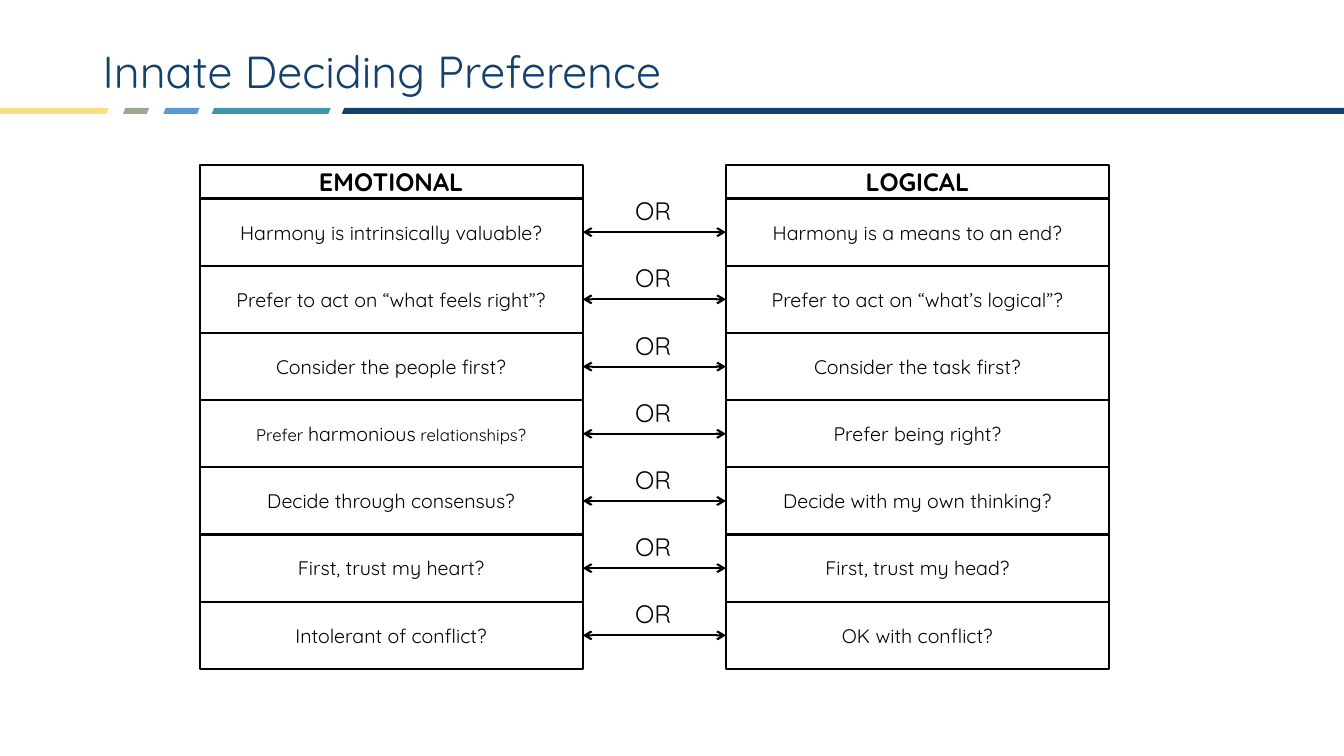
from dataclasses import dataclass

from lxml import etree
from pptx import Presentation
from pptx.dml.color import RGBColor
from pptx.enum.shapes import MSO_CONNECTOR, MSO_SHAPE
from pptx.enum.text import MSO_ANCHOR, PP_ALIGN
from pptx.oxml.ns import qn
from pptx.slide import Slide
from pptx.text.text import TextFrame
from pptx.util import Inches, Pt

RECTANGLE = MSO_SHAPE.RECTANGLE
PARALLELOGRAM = MSO_SHAPE.PARALLELOGRAM
STRAIGHT = MSO_CONNECTOR.STRAIGHT
MIDDLE = MSO_ANCHOR.MIDDLE
TOP = MSO_ANCHOR.TOP
LEFT = PP_ALIGN.LEFT
CENTER = PP_ALIGN.CENTER

FONT = "Quicksand"
NAVY = "13416C"
BLACK = "000000"
LINE_WIDTH = Pt(1.5)

EMOTIONAL_LEFT = 1.98
LOGICAL_LEFT = 7.2
COLUMN_WIDTH = 3.8
HEADER_TOP = 1.64
HEADER_HEIGHT = 0.33
ROWS_TOP = HEADER_TOP + HEADER_HEIGHT
ROW_HEIGHT = 2 / 3


@dataclass(frozen=True)
class Stripe:
    left: float
    width: float
    color: str


@dataclass(frozen=True)
class Run:
    text: str
    size: float = 14


@dataclass(frozen=True)
class Choice:
    emotional: tuple[Run, ...]
    logical: tuple[Run, ...]


STRIPES = (
    Stripe(-0.04, 1.12, "FADF82"),
    Stripe(1.22, 0.26, "99A893"),
    Stripe(1.62, 0.36, "5B9BD5"),
    Stripe(2.1, 1.18, "3E96A8"),
    Stripe(3.39, 9.98, NAVY),
)

CHOICES = (
    Choice((Run("Harmony is intrinsically valuable?"),),
           (Run("Harmony is a means to an end?"),)),
    Choice((Run("Prefer to act on “what feels right”?"),),
           (Run("Prefer to act on “what’s logical”?"),)),
    Choice((Run("Consider the people first?"),),
           (Run("Consider the task first?"),)),
    Choice((Run("Prefer ", 12), Run("harmonious"), Run(" relationships?", 12)),
           (Run("Prefer being right?"),)),
    Choice((Run("Decide through consensus?"),),
           (Run("Decide with my own thinking?"),)),
    Choice((Run("First, trust my heart?"),),
           (Run("First, trust my head?"),)),
    Choice((Run("Intolerant of conflict?"),),
           (Run("OK with conflict?"),)),
)


def rgb(color: str) -> RGBColor:
    return RGBColor.from_string(color)


def write_text(frame: TextFrame, runs: tuple[Run, ...], color: str = BLACK,
               bold: bool = False, align: PP_ALIGN = CENTER,
               anchor: MSO_ANCHOR = MIDDLE) -> None:
    frame.vertical_anchor = anchor
    paragraph = frame.paragraphs[0]
    paragraph.alignment = align
    paragraph.font.name = FONT
    paragraph.font.bold = bold
    paragraph.font.color.rgb = rgb(color)
    paragraph.font.size = Pt(runs[0].size)
    for item in runs:
        run = paragraph.add_run()
        run.text = item.text
        if item.size != runs[0].size:
            run.font.size = Pt(item.size)


def add_stripe(slide: Slide, stripe: Stripe) -> None:
    shape = slide.shapes.add_shape(
        PARALLELOGRAM, Inches(stripe.left), Inches(1.07),
        Inches(stripe.width), Inches(0.06))
    shape.adjustments[0] = 0.4
    shape.shadow.inherit = False
    shape.fill.solid()
    shape.fill.fore_color.rgb = rgb(stripe.color)
    shape.line.fill.background()


def add_title(slide: Slide, title: str) -> None:
    box = slide.shapes.add_textbox(
        Inches(0.92), Inches(0.4), Inches(11.5), Inches(0.67))
    box.text_frame.word_wrap = True
    write_text(box.text_frame, (Run(title, 32),), NAVY, align=LEFT)
    box.text_frame.paragraphs[0].line_spacing = 0.9


def add_cell(slide: Slide, left: float, top: float, height: float,
             runs: tuple[Run, ...], bold: bool = False) -> None:
    shape = slide.shapes.add_shape(
        RECTANGLE, Inches(left), Inches(top),
        Inches(COLUMN_WIDTH), Inches(height))
    shape.shadow.inherit = False
    shape.fill.background()
    shape.line.color.rgb = rgb(BLACK)
    shape.line.width = LINE_WIDTH
    shape.text_frame.word_wrap = True
    write_text(shape.text_frame, runs, bold=bold)


def add_double_arrow(slide: Slide, y: float) -> None:
    arrow = slide.shapes.add_connector(
        STRAIGHT, Inches(EMOTIONAL_LEFT + COLUMN_WIDTH), Inches(y),
        Inches(LOGICAL_LEFT), Inches(y))
    arrow.line.color.rgb = rgb(BLACK)
    arrow.line.width = LINE_WIDTH
    properties = arrow.element.spPr
    line = properties.find(qn("a:ln"))
    for end in ("a:headEnd", "a:tailEnd"):
        etree.SubElement(line, qn(end), type="arrow")
    etree.SubElement(properties, qn("a:effectLst"))


def add_or_label(slide: Slide, top: float) -> None:
    box = slide.shapes.add_textbox(
        Inches(6.2), Inches(top), Inches(0.57), Inches(0.4))
    box.text_frame.word_wrap = False
    write_text(box.text_frame, (Run("OR", 18),), align=LEFT, anchor=TOP)


def main() -> None:
    presentation = Presentation()
    presentation.slide_width = Inches(13.33)
    presentation.slide_height = Inches(7.5)
    slide = presentation.slides.add_slide(presentation.slide_layouts[6])

    for stripe in STRIPES:
        add_stripe(slide, stripe)
    add_title(slide, "Innate Deciding Preference")

    for left, heading in ((EMOTIONAL_LEFT, "EMOTIONAL"), (LOGICAL_LEFT, "LOGICAL")):
        add_cell(slide, left, HEADER_TOP, HEADER_HEIGHT, (Run(heading, 18),), bold=True)
    for index, choice in enumerate(CHOICES):
        top = ROWS_TOP + index * ROW_HEIGHT
        add_cell(slide, EMOTIONAL_LEFT, top, ROW_HEIGHT, choice.emotional)
        add_cell(slide, LOGICAL_LEFT, top, ROW_HEIGHT, choice.logical)
        add_double_arrow(slide, top + ROW_HEIGHT / 2)
        add_or_label(slide, top - 0.08)

    presentation.save("out.pptx")


if __name__ == "__main__":
    main()
